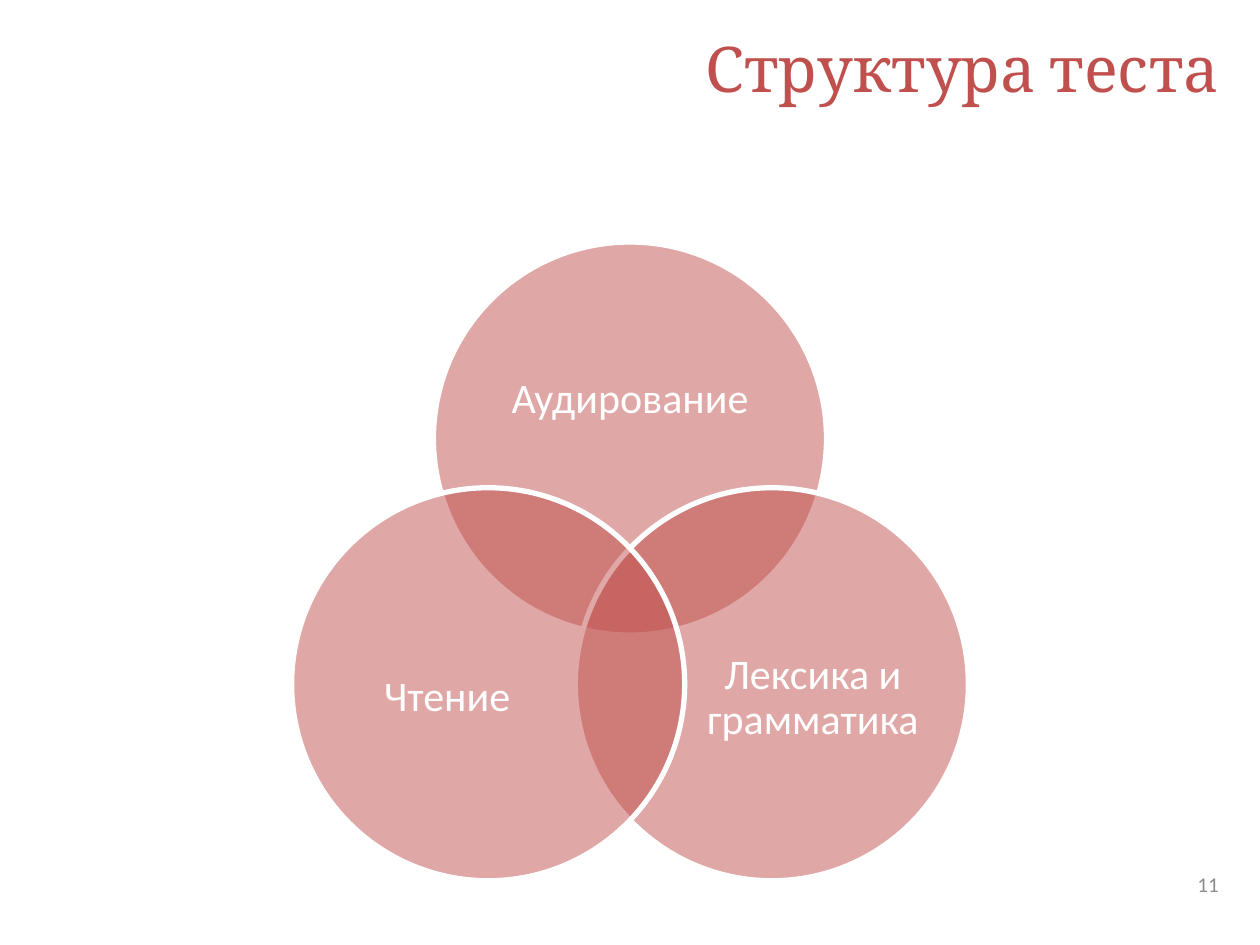
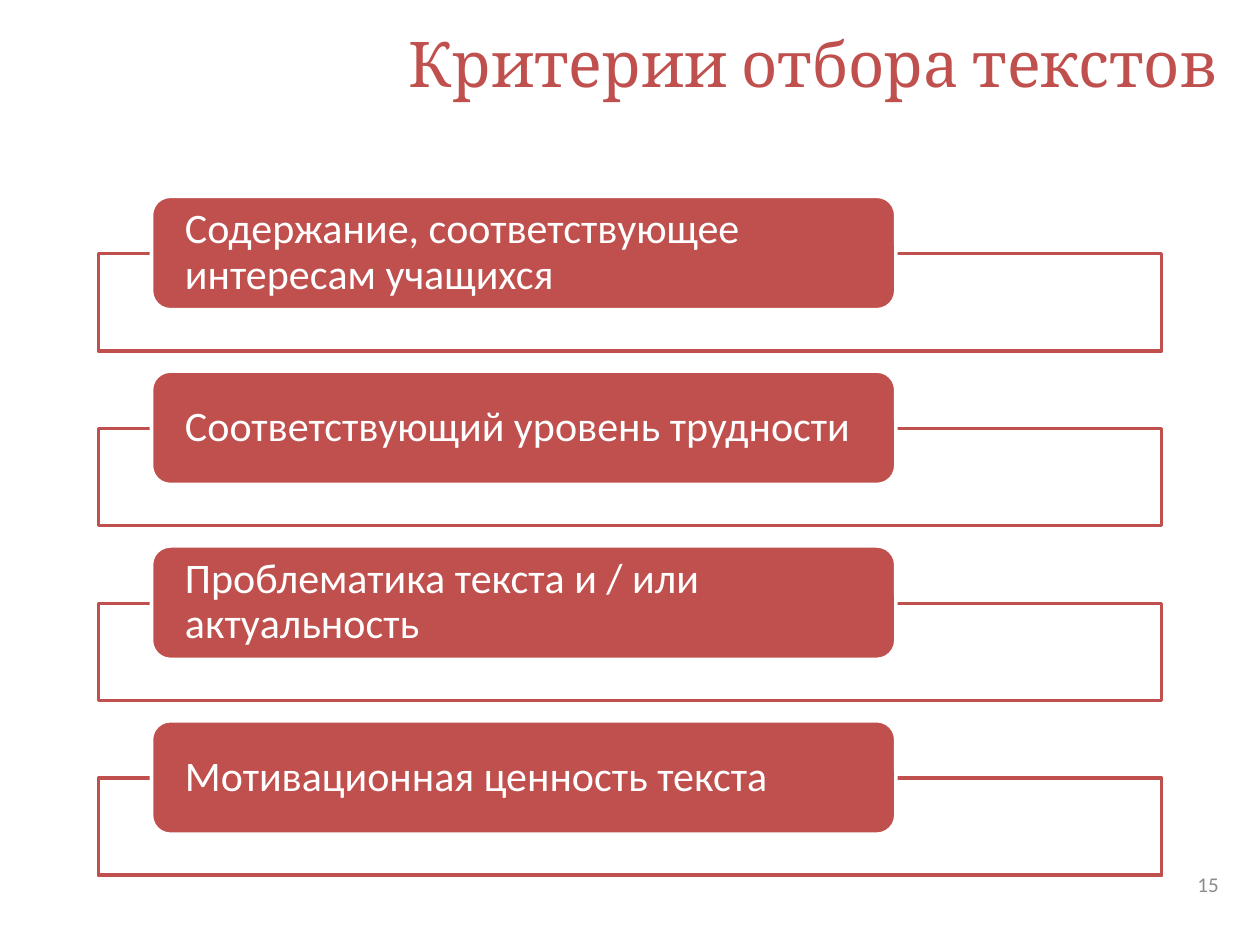
from math import cos, radians, sin

from lxml import etree
from pptx import Presentation
from pptx.dml.color import RGBColor
from pptx.enum.shapes import MSO_SHAPE as Shape
from pptx.enum.text import MSO_ANCHOR as Anchor, PP_ALIGN as Align
from pptx.oxml.ns import qn
from pptx.util import Pt

# Content; lengths are in points
STRUCTURE = {
    "title": "Структура теста", "title_box": (139, 0, 565, 77), "number": "11",
    # label, angle of its circle, label shift from the circle centre, label size
    "parts": [
        ("Аудирование", -90, (0, -22), (165, 101)),
        ("Лексика и грамматика", 30, (23.4, 8), (135, 124)),
        ("Чтение", 150, (-23.4, 8), (135, 124)),
    ],
}
CRITERIA = {
    "title": "Критерии отбора текстов", "title_box": (133, 0, 570.5, 71.3), "number": "15",
    "items": [
        "Содержание, соответствующее интересам учащихся",
        "Соответствующий уровень трудности",
        "Проблематика текста и / или актуальность",
        "Мотивационная ценность текста",
    ],
}

# Shared style
COLORS = {"accent": "C0504D", "light": "FFFFFF", "number": "8C8C8C"}
NUMBER_BOX = (535.7, 491, 167.8, 28.8)

# Circles and rows
VENN_CENTER, VENN_RADIUS, CIRCLE = (360, 344.2), 93.6, 224.6
ROW_TOP, ROW_STEP = 112.2, 99.9
FRAME_LEFT, FRAME_DROP, FRAME_SIZE = 56.2, 32.8, (607.6, 55.5)
PILL_LEFT, PILL_SIZE = 86.6, (425.3, 64.8)


def rgb(name):
    return RGBColor.from_string(COLORS[name])


def write(shape, text, size=24, font="Calibri", color="light", align=Align.CENTER,
          spacing=0.9, margins=(0, 0)):
    frame = shape.text_frame
    frame.word_wrap = True
    frame.vertical_anchor = Anchor.MIDDLE
    frame.margin_left = frame.margin_right = Pt(margins[0])
    frame.margin_top = frame.margin_bottom = Pt(margins[1])
    paragraph = frame.paragraphs[0]
    paragraph.alignment = align
    paragraph.line_spacing = spacing
    run = paragraph.add_run()
    run.text = text
    run.font.size, run.font.name = Pt(size), font
    run.font.color.rgb = rgb(color)


def add_box(slide, kind, box, fill, line, width, opacity=100):
    shape = slide.shapes.add_shape(kind, *map(Pt, box))
    shape.shadow.inherit = False
    shape.fill.solid()
    shape.fill.fore_color.rgb = rgb(fill)
    shape.line.color.rgb = rgb(line)
    shape.line.width = Pt(width)
    if opacity < 100:
        color = shape.fill._xPr.find(qn("a:solidFill"))[0]
        etree.SubElement(color, qn("a:alpha"), val=str(opacity * 1000))
    return shape


def centered(x, y, width, height):
    return x - width / 2, y - height / 2, width, height


def add_slide(deck, content):
    slide = deck.slides.add_slide(deck.slide_layouts[5])
    title = slide.shapes.title
    title.left, title.top, title.width, title.height = map(Pt, content["title_box"])
    write(title, content["title"], size=36, font="Cambria", color="accent",
          align=Align.RIGHT, spacing=1, margins=(7.2, 3.6))
    number = slide.shapes.add_textbox(*map(Pt, NUMBER_BOX))
    write(number, content["number"], size=12, color="number",
          align=Align.RIGHT, spacing=1, margins=(7.2, 3.6))
    return slide


def add_structure(deck):
    slide = add_slide(deck, STRUCTURE)
    for label, angle, (dx, dy), size in STRUCTURE["parts"]:
        x = VENN_CENTER[0] + VENN_RADIUS * cos(radians(angle))
        y = VENN_CENTER[1] + VENN_RADIUS * sin(radians(angle))
        add_box(slide, Shape.OVAL, centered(x, y, CIRCLE, CIRCLE),
                "accent", "light", 3, opacity=50)
        label_box = centered(x + dx, y + dy, *size)
        write(slide.shapes.add_textbox(*map(Pt, label_box)), label)


def add_criteria(deck):
    slide = add_slide(deck, CRITERIA)
    for row, criterion in enumerate(CRITERIA["items"]):
        top = ROW_TOP + row * ROW_STEP
        add_box(slide, Shape.RECTANGLE, (FRAME_LEFT, top + FRAME_DROP, *FRAME_SIZE),
                "light", "accent", 2, opacity=90)
        pill = add_box(slide, Shape.ROUNDED_RECTANGLE, (PILL_LEFT, top, *PILL_SIZE),
                       "accent", "light", 2)
        write(pill, criterion, align=Align.LEFT, margins=(16, 0))


def main():
    deck = Presentation()
    deck.slide_width, deck.slide_height = Pt(720), Pt(540)
    add_structure(deck)
    add_criteria(deck)
    deck.save("out.pptx")


if __name__ == "__main__":
    main()
